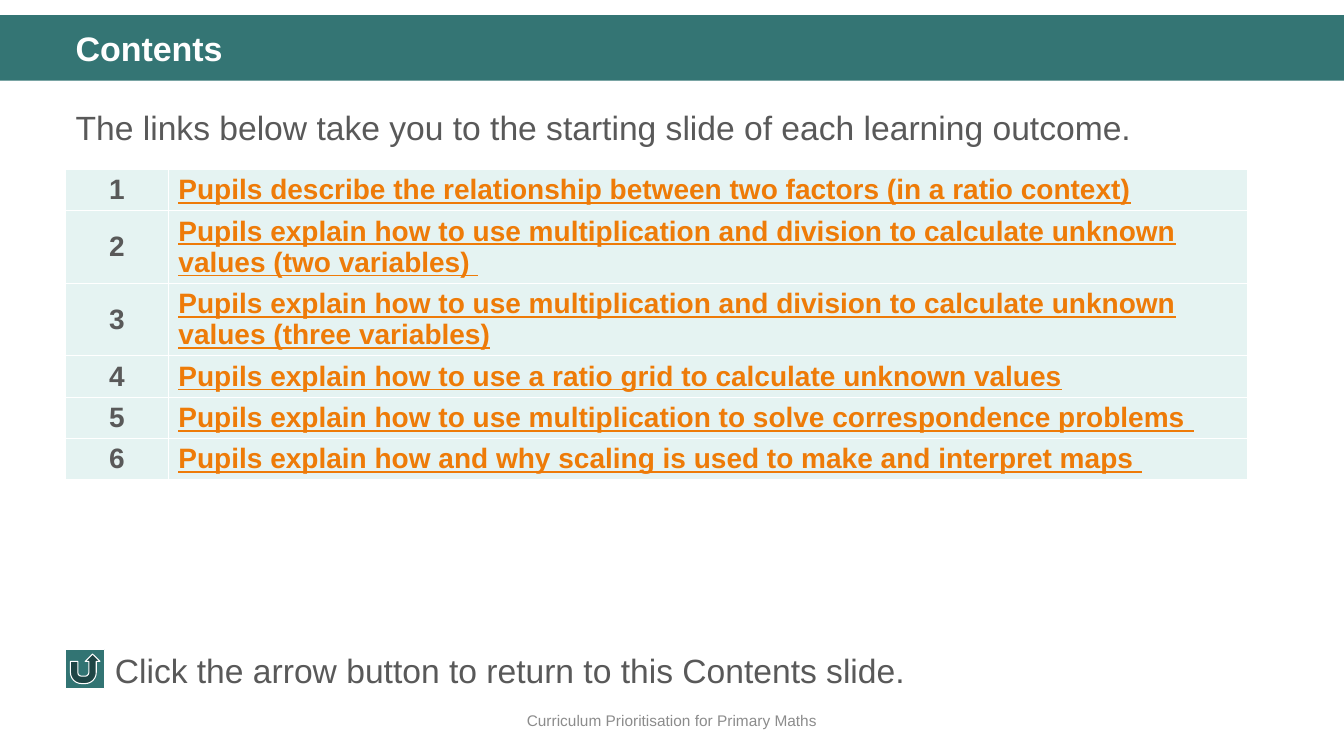
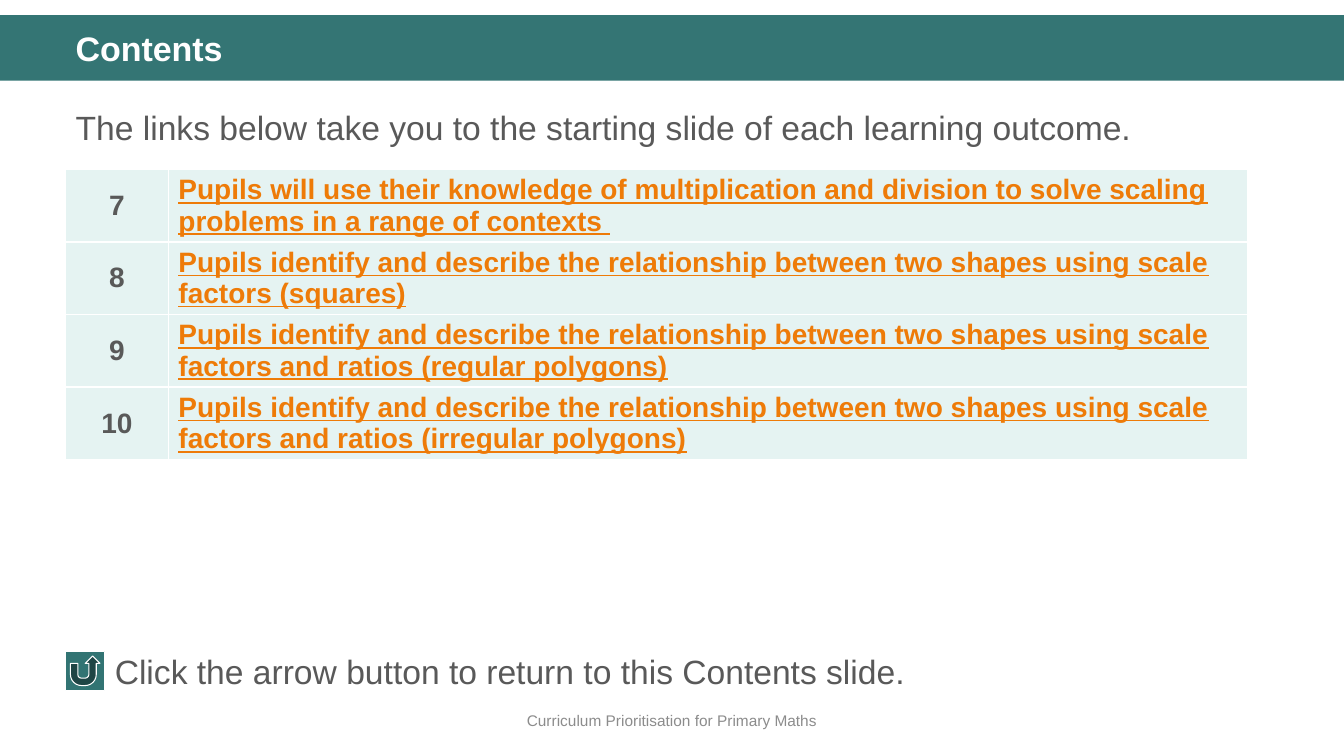
from lxml import etree
from pptx import Presentation
from pptx.dml.color import RGBColor
from pptx.enum.shapes import MSO_SHAPE
from pptx.enum.text import MSO_ANCHOR, MSO_AUTO_SIZE, PP_ALIGN
from pptx.oxml.ns import qn
from pptx.util import Pt

PX = 9144  # 100 px to the inch
WIDTH, HEIGHT = 1333, 750
LEFT = 65
TEXT_WIDTH = 1218
FONT = "Arial"
COLUMNS = (102, 1070)
ROW_HEIGHT = 41
BUTTON_SIZE = 39

COLORS = {
    "band": "347574",
    "button": "327473",
    "cell": "E5F3F2",
    "white": "FFFFFF",
    "text": "595959",
    "link": "EE7B08",
    "footer": "8C8C8C",
}

RECTANGLE = MSO_SHAPE.RECTANGLE
RETURN_BUTTON = MSO_SHAPE.ACTION_BUTTON_RETURN
TOP, MIDDLE = MSO_ANCHOR.TOP, MSO_ANCHOR.MIDDLE
ALIGN_LEFT, ALIGN_CENTER = PP_ALIGN.LEFT, PP_ALIGN.CENTER
NO_AUTOSIZE = MSO_AUTO_SIZE.NONE

PAGES = [
    {
        "first_number": 1,
        "outcomes": [
            "Pupils describe the relationship between two factors (in a ratio context)",
            "Pupils explain how to use multiplication and division to calculate unknown "
            "values (two variables) ",
            "Pupils explain how to use multiplication and division to calculate unknown "
            "values (three variables)",
            "Pupils explain how to use a ratio grid to calculate unknown values",
            "Pupils explain how to use multiplication to solve correspondence problems ",
            "Pupils explain how and why scaling is used to make and interpret maps ",
        ],
        "button_top": 644,
        "note_box": (104, 640, 1202, 50),
    },
    {
        "first_number": 7,
        "outcomes": [
            "Pupils will use their knowledge of multiplication and division to solve scaling "
            "problems in a range of contexts ",
            "Pupils identify and describe the relationship between two shapes using scale "
            "factors (squares)",
            "Pupils identify and describe the relationship between two shapes using scale "
            "factors and ratios (regular polygons)",
            "Pupils identify and describe the relationship between two shapes using scale "
            "factors and ratios (irregular polygons)",
        ],
        "button_top": 646,
        "note_box": (104, 641, 1136, 50),
    },
]


def emu(*lengths):
    return [length * PX for length in lengths]


def rgb(name):
    return RGBColor.from_string(COLORS[name])


def write(frame, text, size, color, bold=False, underline=False, align=ALIGN_LEFT):
    """Fill the first paragraph of a frame with one formatted run."""
    para = frame.paragraphs[0]
    para.alignment = align
    span = para.add_run()
    span.text = text
    font = span.font
    font.name, font.size, font.bold, font.underline = FONT, Pt(size), bold, underline
    font.color.rgb = rgb(color)
    return para


def fill_placeholder(box, place, text, size, color, line_spacing, bold=False):
    box.left, box.top, box.width, box.height = emu(*place)
    frame = box.text_frame
    frame.word_wrap = True
    frame.auto_size = NO_AUTOSIZE
    frame.vertical_anchor = TOP
    para = write(frame, text, size, color, bold)
    para.line_spacing = line_spacing
    para.space_before = Pt(0)
    return para


def remove_bullet(para):
    properties = para._p.get_or_add_pPr()
    properties.set("marL", "0")
    properties.set("indent", "0")
    etree.SubElement(properties, qn("a:buNone"))


def add_text(page, place, text, size, color, anchor=TOP, align=ALIGN_LEFT):
    frame = page.shapes.add_textbox(*emu(*place)).text_frame
    frame.word_wrap = True
    frame.vertical_anchor = anchor
    write(frame, text, size, color, align=align)


def add_shape(page, preset, place, color, line=None):
    shape = page.shapes.add_shape(preset, *emu(*place))
    shape.shadow.inherit = False
    shape.fill.solid()
    shape.fill.fore_color.rgb = rgb(color)
    if line:
        shape.line.color.rgb = rgb(line)
        shape.line.width = Pt(0.75)
    else:
        shape.line.fill.background()
    return shape


def add_layout_band(layout, page):
    """Draw the title band and move it to the back of the shared layout."""
    band = add_shape(page, RECTANGLE, (0, 15, WIDTH, 65), "band")
    layout.shapes.element.insert(2, band.element)


def format_cell(cell):
    properties = cell._tc.get_or_add_tcPr()
    for side in ("lnL", "lnR", "lnT", "lnB"):
        border = etree.SubElement(properties, qn(f"a:{side}"), w=str(Pt(1)))
        solid = etree.SubElement(border, qn("a:solidFill"))
        etree.SubElement(solid, qn("a:srgbClr"), val=COLORS["white"])
    cell.fill.solid()
    cell.fill.fore_color.rgb = rgb("cell")
    cell.vertical_anchor = MIDDLE


def add_outcome_table(page, first_number, outcomes):
    place = emu(LEFT, 168, sum(COLUMNS), ROW_HEIGHT * len(outcomes))
    table = page.shapes.add_table(len(outcomes), len(COLUMNS), *place).table
    table.first_row = table.horz_banding = False
    for column, width in zip(table.columns, COLUMNS):
        column.width = width * PX
    for number, (row, outcome) in enumerate(zip(table.rows, outcomes), first_number):
        row.height = ROW_HEIGHT * PX
        number_cell, outcome_cell = row.cells
        format_cell(number_cell)
        format_cell(outcome_cell)
        write(number_cell.text_frame, str(number), 20, "text", bold=True, align=ALIGN_CENTER)
        write(outcome_cell.text_frame, outcome, 20, "link", bold=True, underline=True)


def add_contents_page(deck, layout, first_number, outcomes, button_top, note_box):
    page = deck.slides.add_slide(layout)
    title, body = page.placeholders
    fill_placeholder(title, (LEFT, 27, TEXT_WIDTH, 47), "Contents", 24.3, "white", 0.9, bold=True)
    intro = fill_placeholder(
        body, (LEFT, 93, TEXT_WIDTH, 351),
        "The links below take you to the starting slide of each learning outcome.",
        24, "text", 1.2)
    remove_bullet(intro)
    add_outcome_table(page, first_number, outcomes)
    add_shape(page, RETURN_BUTTON, (LEFT, button_top, BUTTON_SIZE, BUTTON_SIZE),
              "button", line="white")
    add_text(page, note_box, "Click the arrow button to return to this Contents slide.",
             24, "text")
    add_text(page, (0, 695, WIDTH, 40), "Curriculum Prioritisation for Primary Maths",
             11, "footer", MIDDLE, ALIGN_CENTER)
    return page


def main():
    deck = Presentation()
    deck.slide_width, deck.slide_height = emu(WIDTH, HEIGHT)
    layout = deck.slide_layouts.get_by_name("Title and Content")
    pages = [add_contents_page(deck, layout, **content) for content in PAGES]
    add_layout_band(layout, pages[0])
    deck.save("out.pptx")


if __name__ == "__main__":
    main()
